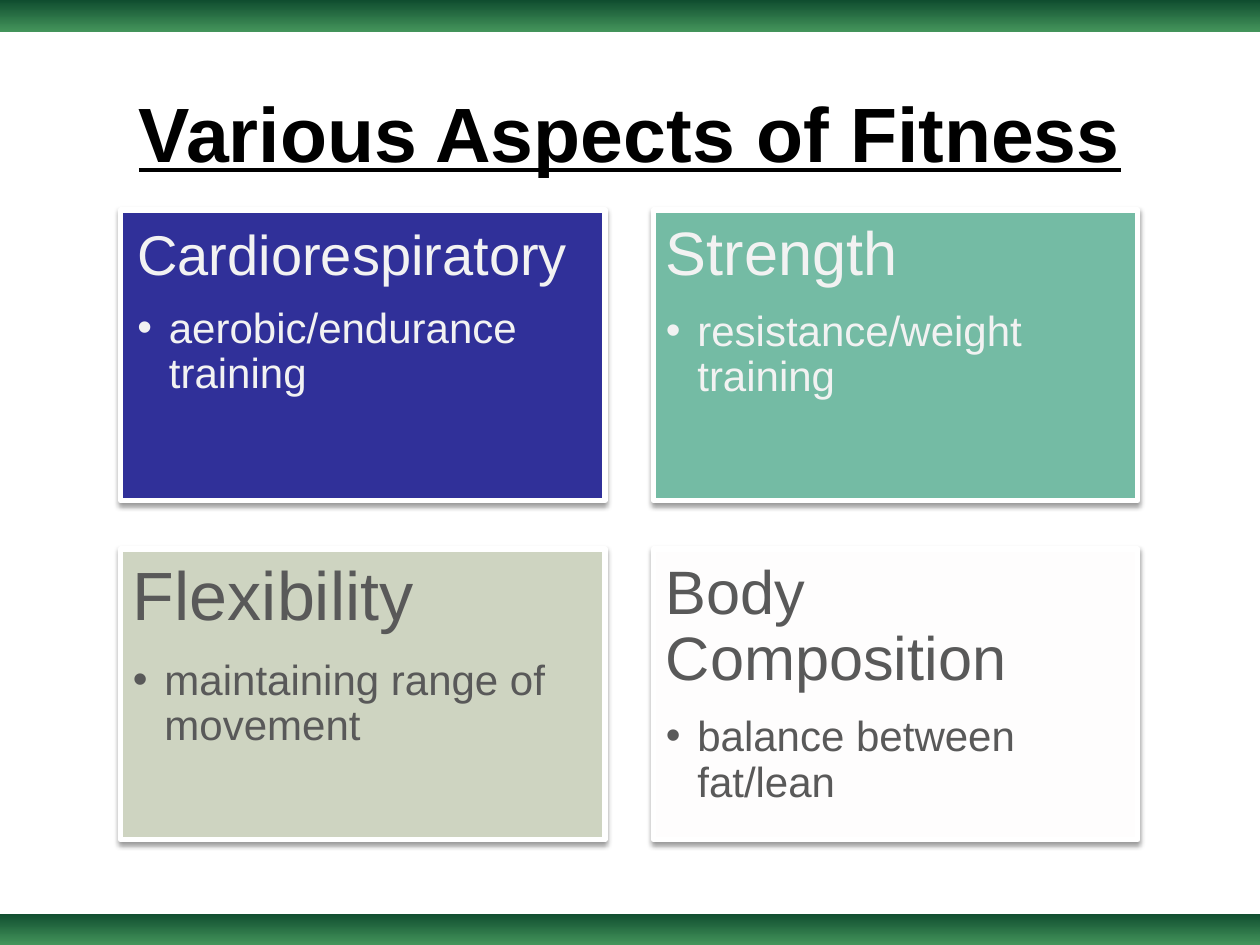
import pptx
import pptx.util
import pptx.oxml
import pptx.oxml.ns
import pptx.dml.color
import pptx.enum.shapes
import pptx.enum.text
from lxml import etree

Pt = pptx.util.Pt
COLORS = {
    "black": "000000", "white": "FFFFFF", "light": "F2F2F2", "gray": "595959",
    "dark_green": "0F4D2F", "green": "44945B", "blue": "303099",
    "teal": "74BBA4", "sage": "CED4C1", "pale": "FEFDFD",
}
WIDTH, HEIGHT = 720, 540
BAR_HEIGHT = 18
CARD_WIDTH, CARD_HEIGHT = 276.8, 166.1
CARD_LEFT, CARD_TOP = 68.9, 120
GAP = 27.7
CARDS = [
    ("Cardiorespiratory", "aerobic/endurance training", "blue", "light", 32, 9.6),
    ("Strength", "resistance/weight training", "teal", "light", 35, 7.2),
    ("Flexibility", "maintaining range of movement", "sage", "gray", 39, 7.2),
    ("Body Composition", "balance between fat/lean", "pale", "gray", 35, 7.2),
]


class FitnessSlide:
    font = "Arial"
    bullet_size = 24
    bullet_indent = 18

    def __init__(self, deck):
        self.page = deck.slides.add_slide(deck.slide_layouts[5])

    def color(self, name):
        return pptx.dml.color.RGBColor.from_string(COLORS[name])

    def style(self, para, size, color, bold=False, underline=False):
        for span in para.runs:
            span.font.name = self.font
            span.font.size = Pt(size)
            span.font.bold = bold
            span.font.underline = underline
            span.font.color.rgb = self.color(color)

    def rectangle(self, left, top, width, height):
        box = self.page.shapes.add_shape(
            pptx.enum.shapes.MSO_SHAPE.RECTANGLE, Pt(left), Pt(top), Pt(width), Pt(height))
        box.shadow.inherit = False
        return box

    def bar(self, top):
        box = self.rectangle(0, top, WIDTH, BAR_HEIGHT)
        box.line.fill.background()
        box.fill.gradient()
        box.fill.gradient_angle = 270
        for stop, name in zip(box.fill.gradient_stops, ("dark_green", "green")):
            stop.color.rgb = self.color(name)

    def title(self, text):
        box = self.page.shapes.title
        box.left, box.top, box.width, box.height = Pt(36), Pt(30), Pt(648), Pt(90)
        frame = box.text_frame
        frame.text = text
        frame.auto_size = pptx.enum.text.MSO_AUTO_SIZE.NONE
        frame.vertical_anchor = pptx.enum.text.MSO_ANCHOR.MIDDLE
        frame.paragraphs[0].alignment = pptx.enum.text.PP_ALIGN.CENTER
        self.style(frame.paragraphs[0], 44, "black", bold=True, underline=True)

    def shadow(self, box):
        effects = box.element.spPr.find(pptx.oxml.ns.qn("a:effectLst"))
        effects.append(pptx.oxml.parse_xml(
            f'<a:outerShdw {pptx.oxml.ns.nsdecls("a")} blurRad="{Pt(3.1)}" dist="{Pt(1.6)}" '
            f'dir="5400000" rotWithShape="0"><a:srgbClr val="{COLORS["black"]}">'
            '<a:alpha val="38000"/></a:srgbClr></a:outerShdw>'))

    def bullet(self, para, color):
        properties = para._p.get_or_add_pPr()
        properties.set("marL", str(Pt(self.bullet_indent)))
        properties.set("indent", str(-Pt(self.bullet_indent)))
        tag = pptx.oxml.ns.qn
        bullet_color = etree.SubElement(properties, tag("a:buClr"))
        etree.SubElement(bullet_color, tag("a:srgbClr"), val=COLORS[color])
        etree.SubElement(properties, tag("a:buFont"), typeface=self.font)
        etree.SubElement(properties, tag("a:buChar"), char="•")

    def card(self, left, top, heading, detail, fill, color, size, inset):
        box = self.rectangle(left, top, CARD_WIDTH, CARD_HEIGHT)
        box.fill.solid()
        box.fill.fore_color.rgb = self.color(fill)
        box.line.color.rgb = self.color("white")
        box.line.width = Pt(3)
        self.shadow(box)
        frame = box.text_frame
        frame.text = f"{heading}\n{detail}"
        frame.word_wrap = True
        frame.vertical_anchor = pptx.enum.text.MSO_ANCHOR.TOP
        frame.margin_left = frame.margin_right = Pt(inset)
        frame.margin_top = frame.margin_bottom = Pt(inset)
        for para, text_size in zip(frame.paragraphs, (size, self.bullet_size)):
            para.alignment = pptx.enum.text.PP_ALIGN.LEFT
            para.line_spacing = 0.9
            self.style(para, text_size, color)
        item = frame.paragraphs[1]
        item.level = 1
        item.space_before = Pt(round(size * 0.35, 1))
        self.bullet(item, color)


def main():
    deck = pptx.Presentation()
    deck.slide_width, deck.slide_height = Pt(WIDTH), Pt(HEIGHT)
    slide = FitnessSlide(deck)
    for top in (0, HEIGHT - BAR_HEIGHT):
        slide.bar(top)
    slide.title("Various Aspects of Fitness")
    for index, card in enumerate(CARDS):
        row, column = divmod(index, 2)
        slide.card(CARD_LEFT + column * (CARD_WIDTH + GAP),
                   CARD_TOP + row * (CARD_HEIGHT + GAP), *card)
    deck.save("out.pptx")


if __name__ == "__main__":
    main()
